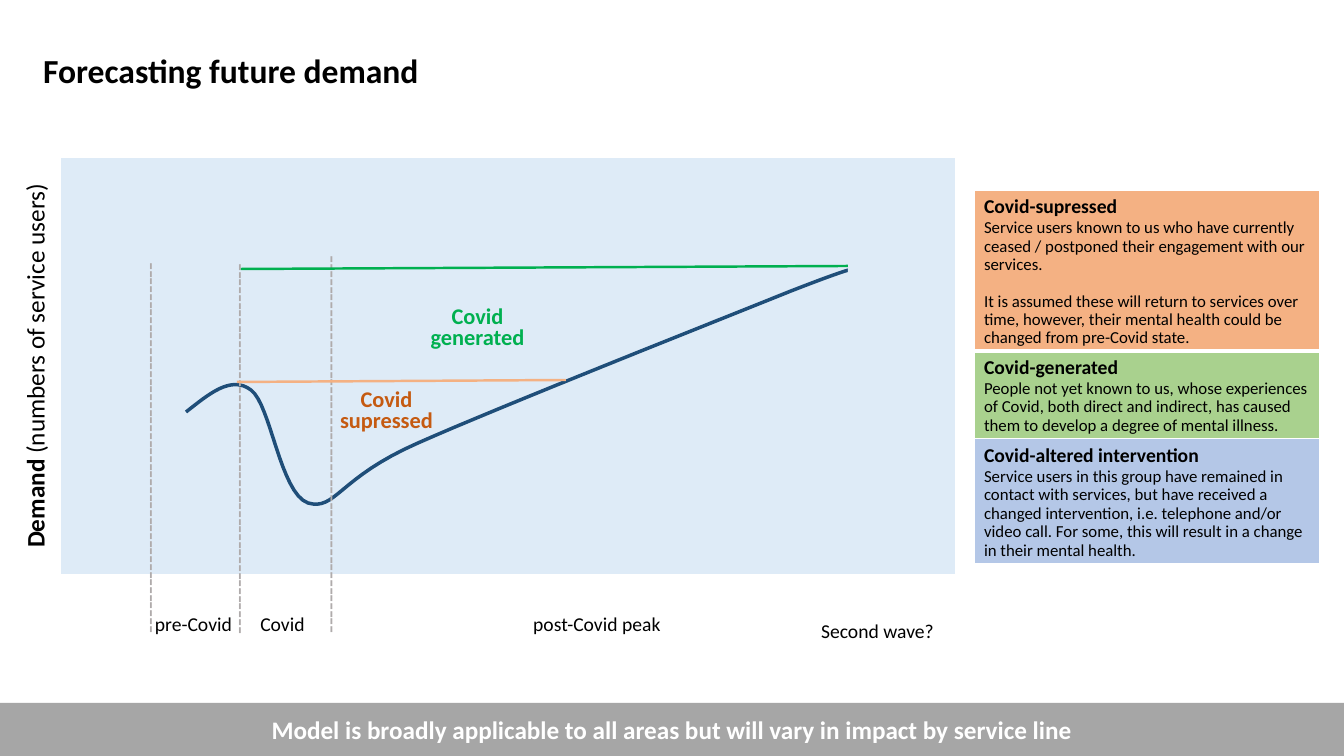
import lxml.etree
import pptx
import pptx.dml.color
import pptx.enum.shapes
import pptx.enum.text
import pptx.oxml.ns
import pptx.util

EMU_PER_PX = 12192000 / 1344
FONT = "Calibri"
COLOURS = {
    "black": "000000", "white": "FFFFFF", "panel": "DEEBF7", "curve": "1F4E79",
    "dash": "AFABAB", "orange_line": "F4B183", "orange_text": "C55A11",
    "green": "00B050", "orange_fill": "F4B183", "green_fill": "A9D18E",
    "blue_fill": "B4C7E7", "banner": "A6A6A6",
}
DEMAND_START = (126, 255)
DEMAND_CURVES = [
    ((149, 237), (171, 218), (191, 233)),
    ((211, 248), (220, 336), (248, 346)),
    ((276, 354), (278, 321), (358, 286)),
    ((439, 250), (659, 163), (731, 134)),
    ((803, 106), (797, 111), (790, 116)),
]
STEPS = 16
PHASE_LINES = [
    (48, (-119, 259, 414, 40)),
    (48, (-24, 264, 404, 42)),
    (49, (41, 237, 457, 42)),
]
PHASE_LABELS = [
    ("pre-Covid", (62, 450, 143, 34)),
    ("Covid", (155, 450, 135, 34)),
    ("post-Covid peak", (270, 450, 534, 34)),
    ("Second wave?", (690, 457, 255, 34)),
]
LEVELS = [
    ("Covid supressed", (263, 228, 127, 54), "orange_text",
     (177, 225), (506, 223), "orange_line"),
    ("Covid generated", (354, 145, 127, 54), "green",
     (181, 112), (788, 109), "green"),
]
DEFINITIONS = [
    ("Covid-supressed", "orange_fill", 160, [
        "Service users known to us who have currently ceased / postponed their "
        "engagement with our services.",
        "It is assumed these will return to services over time, however, their "
        "mental health could be changed from pre-Covid state."]),
    ("Covid-generated", "green_fill", 88, [
        "People not yet known to us, whose experiences of Covid, both direct and "
        "indirect, has caused them to develop a degree of mental illness."]),
    ("Covid-altered intervention", "blue_fill", 125, [
        "Service users in this group have remained in contact with services, but "
        "have received a changed intervention, i.e. telephone and/or video call. "
        "For some, this will result in a change in their mental health."]),
]


def px(*lengths):
    return [round(length * EMU_PER_PX) for length in lengths]


def rgb(name):
    return pptx.dml.color.RGBColor.from_string(COLOURS[name])


def shift(box, place):
    return (box[0] + place[0], box[1] + place[1], *place[2:])


def style(paragraph, size, colour="black", bold=None, align="LEFT", spacing=None):
    paragraph.font.name = FONT
    paragraph.font.size = pptx.util.Pt(size)
    paragraph.font.bold = bold
    paragraph.font.color.rgb = rgb(colour)
    paragraph.alignment = getattr(pptx.enum.text.PP_ALIGN, align)
    if spacing:
        paragraph.line_spacing = spacing


def add_label(slide, box, text, size, align="CENTER", **looks):
    shape = slide.shapes.add_textbox(*px(*box))
    shape.text_frame.word_wrap = True
    paragraph = shape.text_frame.paragraphs[0]
    paragraph.text = text
    style(paragraph, size, align=align, **looks)
    return shape


def add_block(slide, box, colour):
    shape = slide.shapes.add_shape(pptx.enum.shapes.MSO_SHAPE.RECTANGLE, *px(*box))
    shape.shadow.inherit = False
    shape.fill.solid()
    shape.fill.fore_color.rgb = rgb(colour)
    shape.line.fill.background()
    return shape


def add_line(slide, start, end, colour, width):
    line = slide.shapes.add_connector(
        pptx.enum.shapes.MSO_CONNECTOR.STRAIGHT, *px(*start, *end))
    line.line.color.rgb = rgb(colour)
    line.line.width = pptx.util.Pt(width)
    properties = line._element.spPr
    lxml.etree.SubElement(properties, pptx.oxml.ns.qn("a:effectLst"))


def format_cell(cell, colour, bottom_width):
    cell.fill.solid()
    cell.fill.fore_color.rgb = rgb(colour)
    properties = cell._tc.get_or_add_tcPr()
    widths = {"lnL": 1, "lnR": 1, "lnT": 1, "lnB": bottom_width}
    for index, (side, width) in enumerate(widths.items()):
        border = lxml.etree.Element(
            pptx.oxml.ns.qn("a:" + side), w=str(pptx.util.Pt(width)))
        fill = lxml.etree.SubElement(border, pptx.oxml.ns.qn("a:solidFill"))
        lxml.etree.SubElement(
            fill, pptx.oxml.ns.qn("a:srgbClr"), val=COLOURS["white"])
        properties.insert(index, border)


def demand_points():
    points, start = [DEMAND_START], DEMAND_START
    for first, second, end in DEMAND_CURVES:
        for step in range(1, STEPS + 1):
            t = step / STEPS
            u = 1 - t
            points.append(tuple(
                u**3 * a + 3 * u * u * t * b + 3 * u * t * t * c + t**3 * d
                for a, b, c, d in zip(start, first, second, end)))
        start = end
    return points


def add_demand_curve(slide, box):
    points = [px(*shift(box, point)) for point in demand_points()]
    builder = slide.shapes.build_freeform(*points[0])
    builder.add_line_segments(points[1:], close=False)
    curve = builder.convert_to_shape()
    curve.shadow.inherit = False
    curve.fill.background()
    curve.line.color.rgb = rgb("curve")
    curve.line.width = pptx.util.Pt(2.5)
    add_block(slide, shift(box, (788, 100, 58, 38)), "panel")


def add_title(slide, box):
    title = slide.shapes.title
    title.left, title.top, title.width, title.height = px(*box)
    frame = title.text_frame
    frame.text = "Forecasting future demand"
    frame.auto_size = pptx.enum.text.MSO_AUTO_SIZE.NONE
    frame.vertical_anchor = pptx.enum.text.MSO_ANCHOR.TOP
    style(frame.paragraphs[0], 24, bold=True)


def add_demand_diagram(slide, box):
    panel = slide.shapes.add_table(1, 1, *px(*box)).table
    format_cell(panel.cell(0, 0), "panel", 3)
    add_demand_curve(slide, box)
    axis = add_label(slide, shift(box, (-223, 189, 395, 40)), "Demand ", 18)
    axis.rotation = 270
    paragraph = axis.text_frame.paragraphs[0]
    paragraph.runs[0].font.bold = True
    paragraph.add_run().text = "(numbers of service users)"
    for dashes, place in PHASE_LINES:
        divider = add_label(slide, shift(box, place), "-" * dashes, 18,
                            align="LEFT", colour="dash")
        divider.rotation = 270
    for text, place in PHASE_LABELS:
        add_label(slide, shift(box, place), text, 14)
    for text, place, text_colour, start, end, line_colour in LEVELS:
        add_line(slide, shift(box, start), shift(box, end), line_colour, 1.75)
        add_label(slide, shift(box, place), text, 16, colour=text_colour,
                  bold=True, spacing=0.8)


def add_definitions(slide, box):
    table = slide.shapes.add_table(len(DEFINITIONS), 1, *px(*box)).table
    for index, (heading, colour, height, texts) in enumerate(DEFINITIONS):
        table.rows[index].height = px(height)[0]
        cell = table.cell(index, 0)
        format_cell(cell, colour, 3 if index == 0 else 1)
        cell.text = heading
        style(cell.text_frame.paragraphs[0], 14, bold=True)
        for order, text in enumerate(texts):
            paragraph = cell.text_frame.add_paragraph()
            paragraph.text = text
            style(paragraph, 12, bold=False, spacing=0.9)
            if order:
                paragraph.space_before = pptx.util.Pt(13)


def add_banner(slide, box):
    frame = add_block(slide, box, "banner").text_frame
    frame.text = ("Model is broadly applicable to all areas but will vary in impact "
                  "by service line")
    frame.vertical_anchor = pptx.enum.text.MSO_ANCHOR.MIDDLE
    style(frame.paragraphs[0], 18, "white", True, "CENTER")


def main():
    presentation = pptx.Presentation()
    presentation.slide_width, presentation.slide_height = px(1344, 756)
    slide = presentation.slides.add_slide(presentation.slide_layouts[5])
    add_title(slide, (33, 45, 707, 50))
    add_demand_diagram(slide, (60, 157, 896, 419))
    add_definitions(slide, (974, 190, 346, 373))
    add_banner(slide, (0, 703, 1344, 53))
    presentation.save("out.pptx")


if __name__ == "__main__":
    main()
